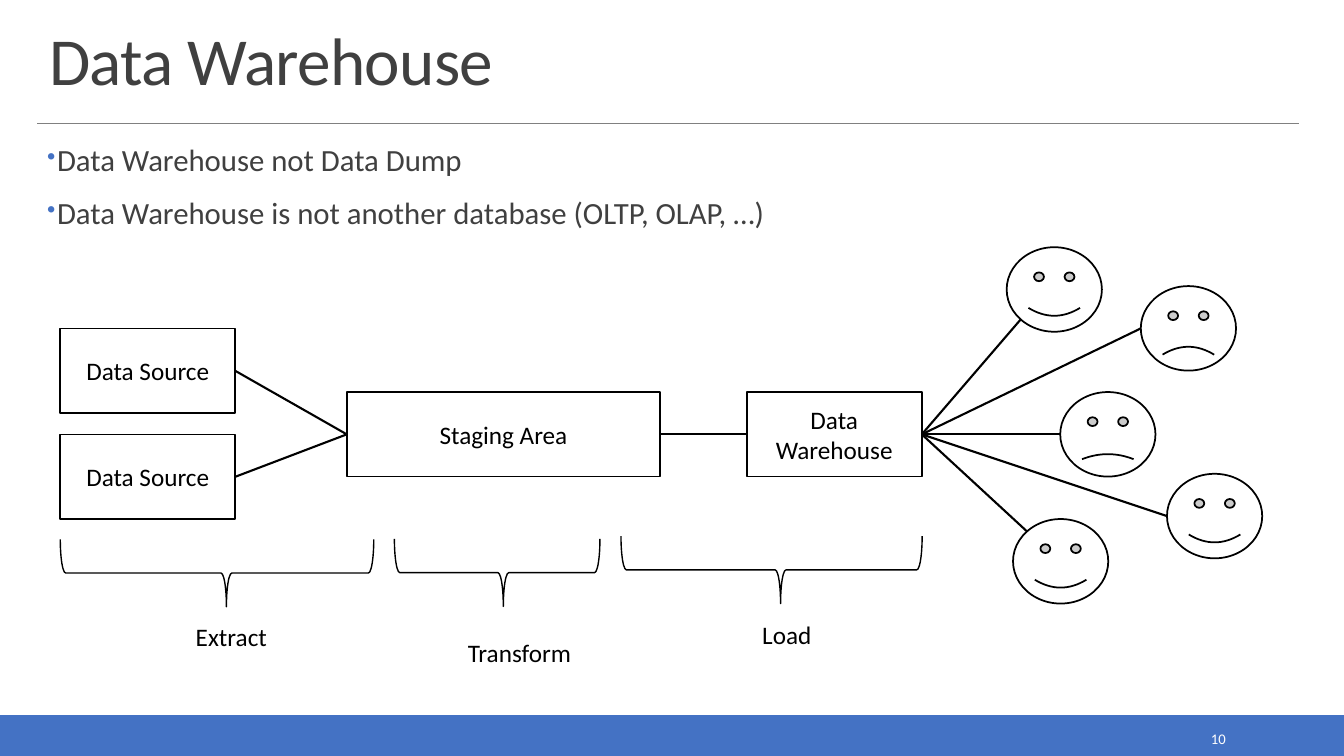
"""Build the Data Warehouse slide with its extract, transform and load flow."""
import lxml.etree
import pptx
import pptx.dml.color
import pptx.enum.shapes
import pptx.enum.text
import pptx.oxml
import pptx.oxml.ns
import pptx.util

Cm = pptx.util.Cm
Pt = pptx.util.Pt
SHAPE = pptx.enum.shapes.MSO_SHAPE
ALIGN = pptx.enum.text.PP_ALIGN
ANCHOR = pptx.enum.text.MSO_ANCHOR

COLOURS = {"accent": "4472C4", "rule": "808080", "text": "404040",
           "ink": "000000", "paper": "FFFFFF"}
FONT = "Calibri"
SLIDE_WIDTH, SLIDE_HEIGHT = 33.87, 19.05

TITLE = "Data Warehouse"
PAGE_NUMBER = "10"
BULLETS = ["Data Warehouse not Data Dump",
           "Data Warehouse is not another database (OLTP, OLAP, …)"]

BOX_HEIGHT = 2.13
BOXES = {
    "source one": ("Data Source", 1.52, 8.28, 4.41),
    "source two": ("Data Source", 1.52, 10.95, 4.41),
    "staging": ("Staging Area", 8.74, 9.88, 7.9),
    "warehouse": ("Data Warehouse", 18.82, 9.88, 4.41),
}
FLOWS = [("source one", "staging"), ("source two", "staging"), ("staging", "warehouse")]

BRACE_DEPTH = 1.7
LABEL_WIDTH, LABEL_HEIGHT = 4.19, 1.02
PHASES = [
    {"label": "Extract", "left": 1.52, "top": 13.59, "span": 7.9, "label_at": (5.83, 15.54)},
    {"label": "Transform", "left": 9.94, "top": 13.58, "span": 5.18, "label_at": (13.09, 15.93)},
    {"label": "Load", "left": 15.65, "top": 13.51, "span": 7.59, "label_at": (19.83, 15.49)},
]

FACE_WIDTH, FACE_HEIGHT = 2.4, 2.13
SMILE = 0.05
LEFT, LOWER_LEFT, UPPER_LEFT = (0, 0.5), (0.15, 0.85), (0.15, 0.15)
FACES = [
    (25.37, 6.23, SMILE, LOWER_LEFT),
    (28.75, 7.21, -SMILE, LEFT),
    (26.72, 9.88, -0.03, LEFT),
    (29.41, 11.94, SMILE, LEFT),
    (25.53, 13.08, SMILE, UPPER_LEFT),
]


def colour(name):
    return pptx.dml.color.RGBColor.from_string(COLOURS[name])


def write(paragraph, text, size, colour_name, alignment=ALIGN.LEFT):
    paragraph.alignment = alignment
    run = paragraph.add_run()
    run.text = text
    run.font.name = FONT
    run.font.size = Pt(size)
    run.font.color.rgb = colour(colour_name)
    return run


def add_shape(slide, kind, left, top, width, height, line_width=1.25, fill=None, line="ink"):
    shape = slide.shapes.add_shape(kind, Cm(left), Cm(top), Cm(width), Cm(height))
    shape.shadow.inherit = False
    if fill:
        shape.fill.solid()
        shape.fill.fore_color.rgb = colour(fill)
    else:
        shape.fill.background()
    shape.line.color.rgb = colour(line)
    shape.line.width = Pt(line_width)
    return shape


def add_line(slide, start, end, line_width=1.5, line="ink"):
    connector = slide.shapes.add_connector(
        pptx.enum.shapes.MSO_CONNECTOR.STRAIGHT, *(Cm(value) for value in (*start, *end)))
    connector.line.color.rgb = colour(line)
    connector.line.width = Pt(line_width)
    lxml.etree.SubElement(connector._element.spPr, pptx.oxml.ns.qn("a:effectLst"))
    return connector


def add_text_box(slide, left, top, width, height):
    text_box = slide.shapes.add_textbox(Cm(left), Cm(top), Cm(width), Cm(height))
    text_box.text_frame.word_wrap = True
    return text_box.text_frame


def add_bullet(paragraph):
    properties = paragraph._p.get_or_add_pPr()
    properties.set("marL", str(Cm(0.25)))
    properties.set("indent", str(-Cm(0.25)))
    bullet_colour = lxml.etree.SubElement(properties, pptx.oxml.ns.qn("a:buClr"))
    lxml.etree.SubElement(bullet_colour, pptx.oxml.ns.qn("a:srgbClr"), val=COLOURS["accent"])
    lxml.etree.SubElement(properties, pptx.oxml.ns.qn("a:buSzPct"), val="80000")
    lxml.etree.SubElement(properties, pptx.oxml.ns.qn("a:buChar"), char="•")


def add_frame(slide):
    add_shape(slide, SHAPE.RECTANGLE, 0, 18.03, SLIDE_WIDTH, 1.02, fill="accent", line="accent")
    add_line(slide, (0.94, 3.12), (32.74, 3.12), 0.5, "rule")
    title = slide.shapes.title
    title.left, title.top, title.width, title.height = Cm(0.99), Cm(0.51), Cm(31.8), Cm(2.13)
    title.text_frame.vertical_anchor = ANCHOR.BOTTOM
    title.text_frame.auto_size = pptx.enum.text.MSO_AUTO_SIZE.NONE
    paragraph = title.text_frame.paragraphs[0]
    paragraph.line_spacing = 0.85
    run = write(paragraph, TITLE, 48, "text")
    run._r.get_or_add_rPr().set("spc", "-50")
    number = add_text_box(slide, 27.51, 18.26, 3.63, 0.71)
    number.vertical_anchor = ANCHOR.MIDDLE
    write(number.paragraphs[0], PAGE_NUMBER, 10.5, "paper", ALIGN.RIGHT)


def add_bullets(slide):
    frame = add_text_box(slide, 0.94, 3.53, 31.8, 3.15)
    for index, text in enumerate(BULLETS):
        paragraph = frame.add_paragraph() if index else frame.paragraphs[0]
        paragraph.line_spacing = 0.9
        paragraph.space_before = Pt(12)
        paragraph.space_after = Pt(2)
        write(paragraph, text, 22, "text")
        add_bullet(paragraph)


def add_flow(slide):
    boxes = {}
    for name, (text, left, top, width) in BOXES.items():
        box = add_shape(slide, SHAPE.RECTANGLE, left, top, width, BOX_HEIGHT)
        box.text_frame.word_wrap = True
        box.text_frame.vertical_anchor = ANCHOR.MIDDLE
        write(box.text_frame.paragraphs[0], text, 18, "ink", ALIGN.CENTER)
        boxes[name] = box
    for source, target in FLOWS:
        connector = add_line(slide, (0, 0), (0, 0))
        connector.begin_connect(boxes[source], 3)
        connector.end_connect(boxes[target], 1)
    return boxes["warehouse"]


def add_phases(slide):
    for phase in PHASES:
        span = phase["span"]
        left = phase["left"] + (span - BRACE_DEPTH) / 2
        top = phase["top"] + (BRACE_DEPTH - span) / 2
        brace = add_shape(slide, SHAPE.LEFT_BRACE, left, top, BRACE_DEPTH, span, 1)
        brace.rotation = 270
        brace.adjustments[0] = 0.08
        brace.adjustments[1] = 0.53
        centre, label_top = phase["label_at"]
        label = add_text_box(slide, centre - LABEL_WIDTH / 2, label_top, LABEL_WIDTH, LABEL_HEIGHT)
        write(label.paragraphs[0], phase["label"], 18, "ink", ALIGN.CENTER)


def add_users(slide, warehouse):
    for left, top, mouth, (across, down) in FACES:
        face = add_shape(slide, SHAPE.SMILEY_FACE, left, top, FACE_WIDTH, FACE_HEIGHT, fill="paper")
        face.adjustments[0] = mouth
        end = (left + across * FACE_WIDTH, top + down * FACE_HEIGHT)
        connector = add_line(slide, (0, 0), end)
        connector.begin_connect(warehouse, 3)


def main():
    presentation = pptx.Presentation()
    presentation.slide_width = Cm(SLIDE_WIDTH)
    presentation.slide_height = Cm(SLIDE_HEIGHT)
    slide = presentation.slides.add_slide(presentation.slide_layouts[5])
    add_frame(slide)
    add_bullets(slide)
    warehouse = add_flow(slide)
    add_phases(slide)
    add_users(slide, warehouse)
    presentation.save("out.pptx")


if __name__ == "__main__":
    main()
